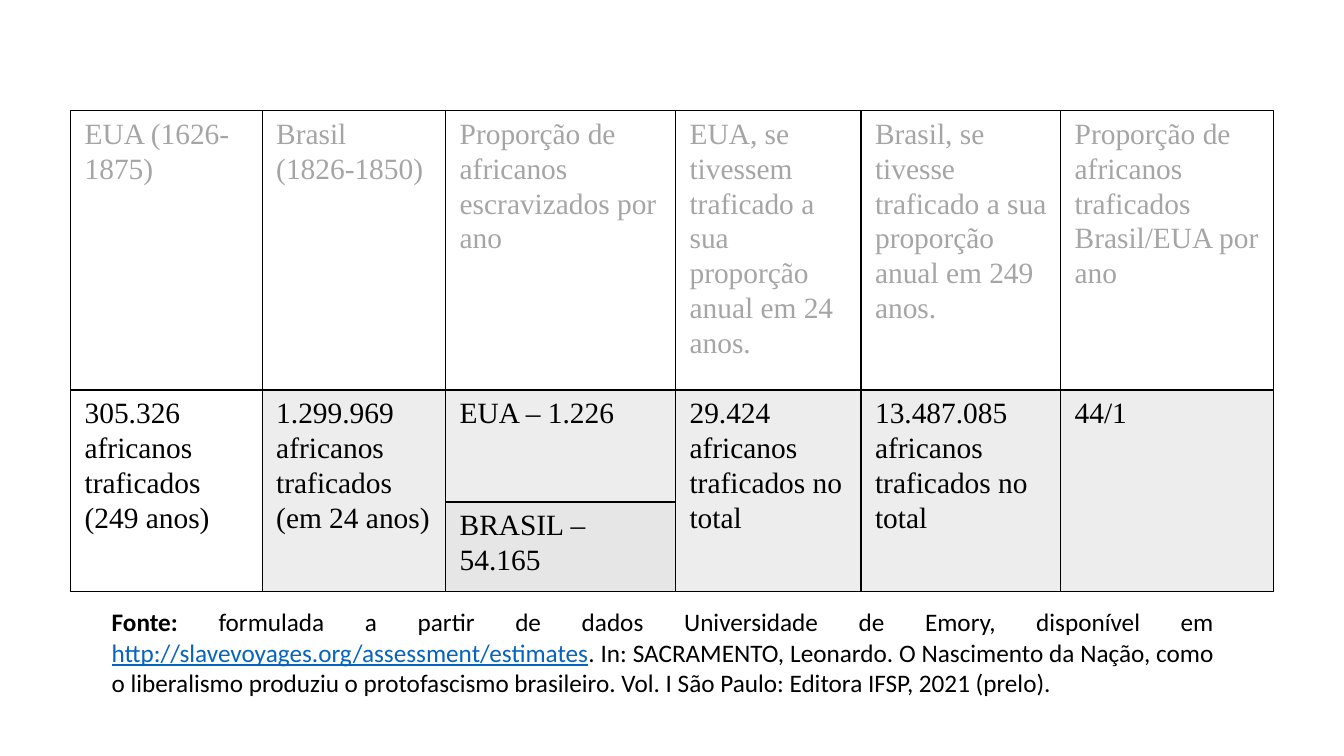
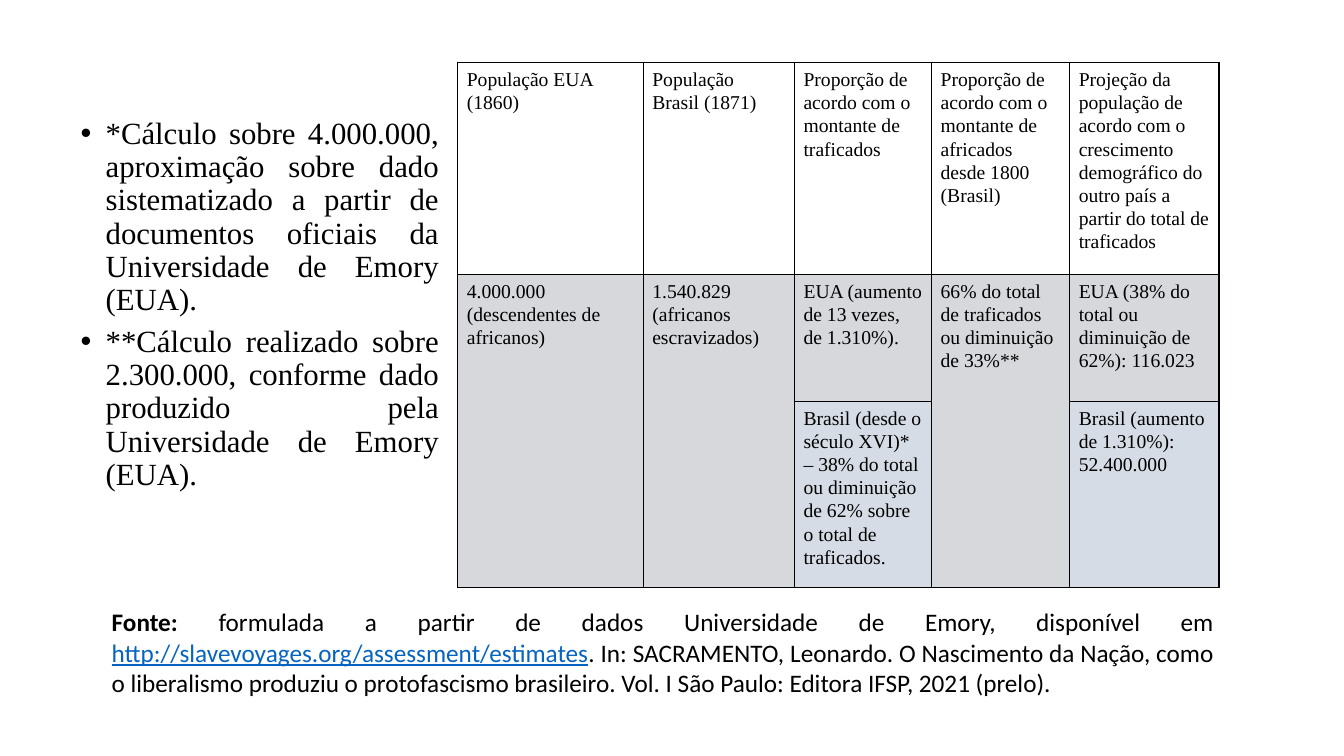
from lxml.etree import SubElement
from pptx import Presentation
from pptx.dml.color import RGBColor
from pptx.enum.text import MSO_AUTO_SIZE, PP_ALIGN
from pptx.oxml import parse_xml
from pptx.oxml.ns import nsdecls, qn
from pptx.util import Inches, Pt

COLORS = {
    "text": "000000",
    "muted": "A5A5A5",
    "link": "0563C1",
    "gray": "A5A5A5",
    "light": "E7E6E6",
    "slate": "333F4F",
    "mist": "D6DCE5",
}
SERIF = "Times New Roman"
SANS = "Calibri"
TINT = 20
BORDER = 0.96
CELL_PARAGRAPH = {"line_spacing": 1.07, "space_after": Pt(8)}
NOTE_PARAGRAPH = {"alignment": PP_ALIGN.JUSTIFY, "line_spacing": 0.9, "space_after": Pt(6)}
SOURCE_BOX = (1.01, 5.97, 11.13, 1)
SOURCE_RUNS = [
    ("Fonte:", "text", {"bold": True}),
    (" formulada a partir de dados Universidade de Emory, disponível em ", "text", {}),
    ("http://slavevoyages.org/assessment/estimates", "link", {"underline": True}),
    (". In: SACRAMENTO, Leonardo. O Nascimento da Nação, como o liberalismo "
     "produziu o protofascismo brasileiro. Vol. I São Paulo: Editora IFSP, 2021 (prelo).",
     "text", {}),
]

TRAFFIC = {
    "at": (0.7, 1.1),
    "cols": [1.9, 1.82, 2.28, 1.84, 1.98, 2.11],
    "rows": [2.77, 1.11, 0.89],
    "size": 21,
    "margin": 0.14,
    "header": "muted",
    "tint": "gray",
    "lower": "light",
    "plain": {(1, 0)},
    "cells": [
        ["EUA (1626-1875)", "Brasil (1826-1850)",
         "Proporção de africanos escravizados por ano",
         "EUA, se tivessem traficado a sua proporção anual em 24 anos.",
         "Brasil, se tivesse traficado a sua proporção anual em 249 anos.",
         "Proporção de africanos traficados Brasil/EUA por ano"],
        ["305.326 africanos traficados (249 anos)",
         "1.299.969 africanos traficados (em 24 anos)",
         "EUA – 1.226",
         "29.424 africanos traficados no total",
         "13.487.085 africanos traficados no total",
         "44/1"],
        [None, None, "BRASIL – 54.165", None, None, None],
    ],
}
POPULATION = {
    "at": (4.54, 0.62),
    "cols": [1.84, 1.5, 1.36, 1.37, 1.48],
    "rows": [2.1, 1.26, 1.85],
    "size": 14,
    "margin": 0.09,
    "header": "text",
    "tint": "slate",
    "lower": "mist",
    "plain": set(),
    "cells": [
        ["População EUA (1860)", "População Brasil (1871)",
         "Proporção de acordo com o montante de traficados",
         "Proporção de acordo com o montante de africados desde 1800 (Brasil)",
         "Projeção da população de acordo com o crescimento demográfico do outro "
         "país a partir do total de traficados"],
        ["4.000.000 (descendentes de africanos)",
         "1.540.829 (africanos escravizados)",
         "EUA (aumento de 13 vezes, de 1.310%).",
         "66% do total de traficados ou diminuição de 33%**",
         "EUA (38% do total ou diminuição de 62%): 116.023"],
        [None, None,
         "Brasil (desde o século XVI)* – 38% do total ou diminuição de 62% sobre "
         "o total de traficados.",
         None, "Brasil (aumento de 1.310%): 52.400.000"],
    ],
}
NOTES = [
    "*Cálculo sobre 4.000.000, aproximação sobre dado sistematizado a partir de "
    "documentos oficiais da Universidade de Emory (EUA).",
    "**Cálculo realizado sobre 2.300.000, conforme dado produzido pela "
    "Universidade de Emory (EUA).",
]


def apply(target, formats):
    for name, value in formats.items():
        setattr(target, name, value)


def add_run(p, text, font, size, color, **formats):
    r = p.add_run()
    r.text = text
    apply(r.font, {"name": font, "size": Pt(size), **formats})
    r.font.color.rgb = RGBColor.from_string(COLORS[color])


def add_text_box(s, box):
    tf = s.shapes.add_textbox(*map(Inches, box)).text_frame
    tf.word_wrap = True
    return tf


def add_borders(cell):
    tc_pr = cell._tc.get_or_add_tcPr()
    for i, side in enumerate("LRTB"):
        tc_pr.insert(i, parse_xml(
            f'<a:ln{side} {nsdecls("a")} w="{Pt(BORDER)}"><a:solidFill>'
            f'<a:srgbClr val="{COLORS["text"]}"/></a:solidFill></a:ln{side}>'))


def fill_cell(cell, color, alpha=100):
    if color is None:
        cell.fill.background()
        return
    cell.fill.solid()
    cell.fill.fore_color.rgb = RGBColor.from_string(COLORS[color])
    if alpha < 100:
        rgb = cell._tc.tcPr.find(qn("a:solidFill")).find(qn("a:srgbClr"))
        SubElement(rgb, qn("a:alpha")).set("val", str(alpha * 1000))


def add_data_table(s, data):
    cols, rows = data["cols"], data["rows"]
    box = (*data["at"], sum(cols), sum(rows))
    table = s.shapes.add_table(len(rows), len(cols), *map(Inches, box)).table
    apply(table, {"first_row": False, "horz_banding": False})
    for col, width in zip(table.columns, cols):
        col.width = Inches(width)
    for row, height in zip(table.rows, rows):
        row.height = Inches(height)
    margin = Inches(data["margin"])
    fills = [(None,), (data["tint"], TINT), (data["lower"],)]
    for i, texts in enumerate(data["cells"]):
        for j, text in enumerate(texts):
            cell = table.cell(i, j)
            add_borders(cell)
            if text is None:
                table.cell(i - 1, j).merge(cell)
                continue
            fill_cell(cell, *((None,) if (i, j) in data["plain"] else fills[i]))
            apply(cell, {"margin_left": margin, "margin_right": margin,
                         "margin_top": Inches(0.05), "margin_bottom": Inches(0.05)})
            p = cell.text_frame.paragraphs[0]
            apply(p, CELL_PARAGRAPH)
            add_run(p, text, SERIF, data["size"], "text" if i else data["header"])


def add_notes_list(s, box, notes):
    tf = add_text_box(s, box)
    for i, note in enumerate(notes):
        p = tf.add_paragraph() if i else tf.paragraphs[0]
        apply(p, NOTE_PARAGRAPH)
        p_pr = p._p.get_or_add_pPr()
        p_pr.set("marL", str(Inches(0.25)))
        p_pr.set("indent", str(Inches(-0.25)))
        SubElement(p_pr, qn("a:buFont")).set("typeface", "Arial")
        SubElement(p_pr, qn("a:buChar")).set("char", "•")
        add_run(p, note, SERIF, 22, "text")


def add_source(s, box):
    tf = add_text_box(s, box)
    tf.auto_size = MSO_AUTO_SIZE.SHAPE_TO_FIT_TEXT
    p = tf.paragraphs[0]
    p.alignment = PP_ALIGN.JUSTIFY
    for text, color, formats in SOURCE_RUNS:
        add_run(p, text, SANS, 18, color, **formats)


def add_table_slide(prs, data, notes=()):
    s = prs.slides.add_slide(prs.slide_layouts[6])
    if notes:
        add_notes_list(s, (0.7, 1.12, 3.75, 3.73), notes)
    add_data_table(s, data)
    add_source(s, SOURCE_BOX)


def main():
    prs = Presentation()
    apply(prs, {"slide_width": Inches(13.33), "slide_height": Inches(7.5)})
    add_table_slide(prs, TRAFFIC)
    add_table_slide(prs, POPULATION, NOTES)
    prs.save("out.pptx")


if __name__ == "__main__":
    main()
